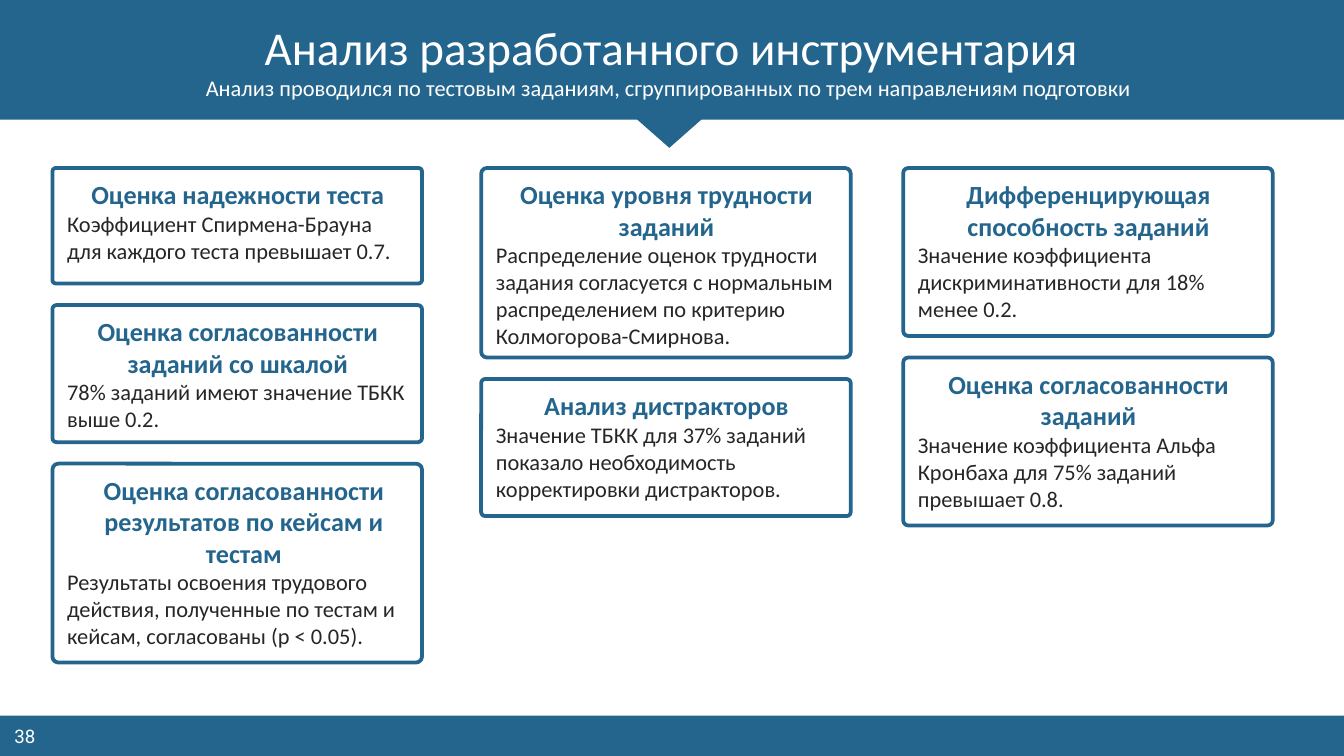
from lxml import etree
from pptx import Presentation
from pptx.dml.color import RGBColor
from pptx.enum.shapes import MSO_SHAPE
from pptx.enum.text import MSO_ANCHOR, MSO_AUTO_SIZE, PP_ALIGN
from pptx.oxml.ns import qn
from pptx.util import Inches, Pt

RECTANGLE = MSO_SHAPE.RECTANGLE
TRIANGLE = MSO_SHAPE.ISOSCELES_TRIANGLE
ROUNDED = MSO_SHAPE.ROUNDED_RECTANGLE
LEFT, CENTER = PP_ALIGN.LEFT, PP_ALIGN.CENTER
TOP, MIDDLE = MSO_ANCHOR.TOP, MSO_ANCHOR.MIDDLE
NO_AUTOFIT = MSO_AUTO_SIZE.NONE

BLUE, WHITE, DARK = "24658D", "FFFFFF", "262626"
WIDTH = 10
HEIGHT = WIDTH * 9 / 16
FOOTER = 0.3
CARD_TOP, CARD_WIDTH, CARD_GAP = 1.25, 2.75, 0.16
PAD_X, PAD_Y = 0.11, 0.08

COLUMNS = [
    (0.39, [
        (0.86, 2.54, "Оценка надежности теста",
         "Коэффициент Спирмена-Брауна для каждого теста превышает 0.7."),
        (1.02, 2.54, "Оценка согласованности заданий со шкалой",
         "78% заданий имеют значение ТБКК выше 0.2."),
        (1.48, 2.63, "Оценка согласованности результатов по кейсам и тестам",
         "Результаты освоения трудового действия, полученные по тестам и кейсам, "
         "согласованы (p < 0.05)."),
    ]),
    (3.58, [
        (1.41, 2.54, "Оценка уровня трудности заданий",
         "Распределение оценок трудности задания согласуется с нормальным "
         "распределением по критерию Колмогорова-Смирнова."),
        (1.02, 2.54, "Анализ дистракторов",
         "Значение ТБКК для 37% заданий показало необходимость "
         "корректировки дистракторов."),
    ]),
    (6.72, [
        (1.25, 2.54, "Дифференцирующая способность заданий",
         "Значение коэффициента дискриминативности для 18% менее 0.2."),
        (1.25, 2.54, "Оценка согласованности заданий",
         "Значение коэффициента Альфа Кронбаха для 75% заданий превышает 0.8."),
    ]),
]


def paint(color_format, color):
    color_format.rgb = RGBColor.from_string(color)


def write(box, lines, anchor=TOP, wrap=True):
    frame = box.text_frame
    frame.margin_left = frame.margin_right = frame.margin_top = frame.margin_bottom = 0
    frame.auto_size = NO_AUTOFIT
    frame.word_wrap = wrap
    frame.vertical_anchor = anchor
    frame.text = "\n".join(line[0] for line in lines)
    for para, (_, size, color, bold, align, font) in zip(frame.paragraphs, lines):
        if box.is_placeholder:
            properties = para._p.get_or_add_pPr()
            properties.set("marL", "0")
            properties.set("indent", "0")
            etree.SubElement(properties, qn("a:buNone"))
        para.alignment = align
        para.space_before = Pt(0)
        para.font.size = Pt(size)
        para.font.bold = bold
        para.font.name = font
        paint(para.font.color, color)


deck = Presentation()
deck.slide_width, deck.slide_height = Inches(WIDTH), Inches(HEIGHT)
page = deck.slides.add_slide(deck.slide_layouts[1])

for kind, left, top, width, height, turn in [
    (RECTANGLE, 0, HEIGHT - FOOTER, WIDTH, FOOTER, 0),
    (RECTANGLE, 0, 0, WIDTH, 0.89, 0),
    (TRIANGLE, 4.73, 0.88, 0.5, 0.22, 180),
]:
    band = page.shapes.add_shape(
        kind, Inches(left), Inches(top), Inches(width), Inches(height))
    band.rotation = turn
    band.shadow.inherit = False
    band.fill.solid()
    paint(band.fill.fore_color, BLUE)
    band.line.fill.background()

title, subtitle = page.shapes.title, page.placeholders[1]
for box, top, height in [(title, 0.14, 0.37), (subtitle, 0.56, 0.19)]:
    box.left, box.top = Inches(0.43), Inches(top)
    box.width, box.height = Inches(9.13), Inches(height)
    page.shapes.element.append(box.element)
write(title, [("Анализ разработанного инструментария", 25.2, WHITE, False, CENTER, "Calibri")])
write(subtitle, [(
    "Анализ проводился по тестовым заданиям, сгруппированных по трем направлениям подготовки ",
    12, WHITE, False, CENTER, "Calibri")], MIDDLE, False)

number = page.shapes.add_textbox(Inches(0.02), Inches(5.39), Inches(0.33), Inches(0.17))
write(number, [("38", 10, WHITE, False, CENTER, "Roboto")], MIDDLE)

for left, cards in COLUMNS:
    top = CARD_TOP
    for height, text_width, heading, finding in cards:
        card = page.shapes.add_shape(
            ROUNDED, Inches(left), Inches(top), Inches(CARD_WIDTH), Inches(height))
        card.adjustments[0] = 0.03
        card.shadow.inherit = False
        card.fill.background()
        card.line.width = Pt(2)
        paint(card.line.color, BLUE)
        box = page.shapes.add_textbox(
            Inches(left + PAD_X), Inches(top + PAD_Y),
            Inches(text_width), Inches(height - 2 * PAD_Y))
        write(box, [
            (heading, 14, BLUE, True, CENTER, "Calibri"),
            (finding, 12, DARK, False, LEFT, "Calibri"),
        ])
        top += height + CARD_GAP

deck.save("out.pptx")
